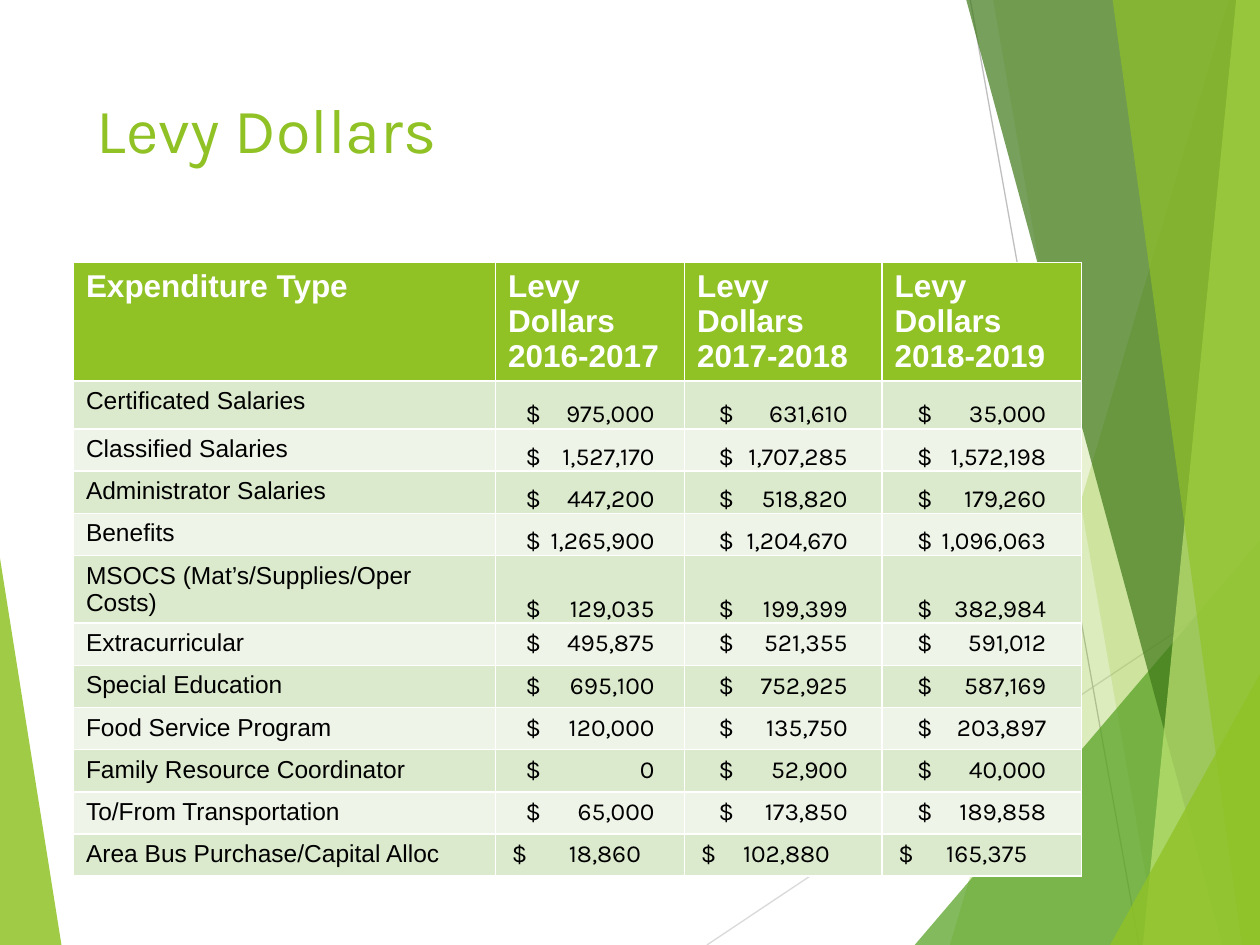
from dataclasses import dataclass

from lxml.etree import SubElement
from pptx import Presentation
from pptx.dml.color import RGBColor
from pptx.enum.shapes import MSO_CONNECTOR
from pptx.enum.text import MSO_ANCHOR, PP_ALIGN
from pptx.oxml.ns import qn
from pptx.util import Cm, Pt


@dataclass(frozen=True)
class Theme:
    lime: str = "90C226"
    green: str = "54A021"
    forest: str = "3F7819"
    pale: str = "C0E474"
    white: str = "FFFFFF"
    black: str = "000000"
    bands: tuple = ("DBE9CD", "EEF4E8")
    lines: tuple = ("D9D9D9", "BFBFBF")
    body_font: str = "Arial"
    accent_font: str = "Karla"
    title_size: int = 36
    header_size: int = 18
    body_size: int = 14


@dataclass(frozen=True)
class Box:
    """An area of the page, in centimetres."""
    left: float
    top: float
    width: float
    height: float


THEME = Theme()
PAGE = Box(0, 0, 25.4, 19.05)
TITLE = Box(1.7, 1.7, 17.63, 3.66)
TABLE = Box(1.48, 5.29, 20.32, 11.99)

COLUMN_WIDTHS = (8.51, 3.81, 3.98, 4.02)
HEADER_HEIGHT, FIRST_HEIGHT, ROW_HEIGHT = 1.52, 0.97, 0.85
AMOUNT_WIDTH = 2.6  # from the dollar sign to the last digit
LOW_ROWS = 5  # the first rows hold their amounts at the bottom
YEARS = ("2016-2017", "2017-2018", "2018-2019")
EXPENDITURES = (
    ("Certificated Salaries", "975,000", "631,610", "35,000"),
    ("Classified Salaries", "1,527,170", "1,707,285", "1,572,198"),
    ("Administrator Salaries", "447,200", "518,820", "179,260"),
    ("Benefits", "1,265,900", "1,204,670", "1,096,063"),
    ("MSOCS (Mat’s/Supplies/Oper Costs)", "129,035", "199,399", "382,984"),
    ("Extracurricular", "495,875", "521,355", "591,012"),
    ("Special Education", "695,100", "752,925", "587,169"),
    ("Food Service Program", "120,000", "135,750", "203,897"),
    ("Family Resource Coordinator", "0", "52,900", "40,000"),
    ("To/From Transportation", "65,000", "173,850", "189,858"),
    ("Area Bus Purchase/Capital Alloc", "18,860", "102,880", "165,375"),
)


def set_font(para, color, **formats):
    for name, value in formats.items():
        setattr(para.font, name, value)
    para.font.color.rgb = RGBColor.from_string(color)


def add_facet(page, box, points, color, opacity):
    """Draw a borderless translucent polygon; points are relative to the box."""
    corners = [(Cm(box.left + x), Cm(box.top + y)) for x, y in points]
    builder = page.shapes.build_freeform(*corners[0])
    builder.add_line_segments(corners[1:], close=True)
    facet = builder.convert_to_shape()
    facet.shadow.inherit = False
    facet.line.fill.background()
    facet.fill.solid()
    facet.fill.fore_color.rgb = RGBColor.from_string(color)
    color_node = facet.fill._xPr.find(".//" + qn("a:srgbClr"))
    SubElement(color_node, qn("a:alpha"), val=str(opacity * 1000))


def add_thin_line(page, box, start, end, color):
    line = page.shapes.add_connector(
        MSO_CONNECTOR.STRAIGHT,
        Cm(box.left + start[0]), Cm(box.top + start[1]),
        Cm(box.left + end[0]), Cm(box.top + end[1]))
    line.line.width = Pt(0.75)
    line.line.color.rgb = RGBColor.from_string(color)
    SubElement(line._element.spPr, qn("a:effectLst"))


def add_backdrop(page, box):
    right, bottom = box.width, box.height

    def band(top_x, bottom_x):
        return [(top_x, 0), (bottom_x, bottom), (right, bottom), (right, 0)]

    def wedge(edge_x, edge_y, foot_x):
        return [(edge_x, edge_y), (foot_x, bottom), (edge_x, bottom)]

    add_facet(page, box, wedge(0, 11.25, 1.24), THEME.lime, 85)
    add_thin_line(page, box, (14.25, bottom), (right, 11.6), THEME.lines[0])
    add_thin_line(page, box, (19.56, 0), (22.96, bottom), THEME.lines[1])
    for points, color, opacity in (
        (band(24.77, 19.15), THEME.lime, 30),
        (band(20.02, 23.34), THEME.lime, 20),
        (wedge(right, 10.9, 18.44), THEME.green, 72),
        (band(19.48, 24.64), THEME.forest, 70),
        (band(24.92, 23.04), THEME.pale, 70),
        (band(22.43, 25.04), THEME.lime, 65),
        (wedge(right, 13.59, 22.38), THEME.lime, 80),
    ):
        add_facet(page, box, points, color, opacity)


def add_title(page, box, text):
    title = page.shapes.title
    for name in ("left", "top", "width", "height"):
        setattr(title, name, Cm(getattr(box, name)))
    title.text_frame.text = text
    title.text_frame.vertical_anchor = MSO_ANCHOR.TOP
    para = title.text_frame.paragraphs[0]
    para.alignment = PP_ALIGN.LEFT
    set_font(para, THEME.lime, name=THEME.accent_font, size=Pt(THEME.title_size))


def fill_cell(cell, text, fill, color, **formats):
    cell.text = text
    cell.fill.solid()
    cell.fill.fore_color.rgb = RGBColor.from_string(fill)
    for para in cell.text_frame.paragraphs:
        set_font(para, color, **formats)


def align_amount(cell, indent, low):
    """Set the dollar sign at the indent and the digits on a right tab stop."""
    cell.margin_left, cell.margin_right = Cm(indent), Cm(0.03)
    if low:
        cell.margin_top, cell.margin_bottom = Cm(0.03), 0
        cell.vertical_anchor = MSO_ANCHOR.BOTTOM
    para = cell.text_frame.paragraphs[0]
    para.alignment = PP_ALIGN.LEFT
    tabs = SubElement(para._p.get_or_add_pPr(), qn("a:tabLst"))
    SubElement(tabs, qn("a:tab"), pos=str(Cm(AMOUNT_WIDTH)), algn="r")


def add_levy_table(page, box):
    table = page.shapes.add_table(
        len(EXPENDITURES) + 1, len(COLUMN_WIDTHS), Cm(box.left), Cm(box.top),
        Cm(box.width), Cm(box.height)).table
    for column, width in zip(table.columns, COLUMN_WIDTHS):
        column.width = Cm(width)
    heights = [HEADER_HEIGHT, FIRST_HEIGHT] + [ROW_HEIGHT] * (len(EXPENDITURES) - 1)
    for row, height in zip(table.rows, heights):
        row.height = Cm(height)

    headings = ["Expenditure Type"] + [f"Levy Dollars\n{year}" for year in YEARS]
    for cell, heading in zip(table.rows[0].cells, headings):
        fill_cell(cell, heading, THEME.lime, THEME.white, name=THEME.body_font,
                  size=Pt(THEME.header_size), bold=True)

    for index, (label, *amounts) in enumerate(EXPENDITURES):
        fill = THEME.bands[index % 2]
        is_last = index == len(EXPENDITURES) - 1
        label_cell, *amount_cells = table.rows[index + 1].cells
        fill_cell(label_cell, label, fill, THEME.black, name=THEME.body_font,
                  size=Pt(THEME.body_size), bold=False)
        for cell, amount, width in zip(amount_cells, amounts, COLUMN_WIDTHS[1:]):
            fill_cell(cell, f"$\t{amount}", fill, THEME.black, name=THEME.accent_font,
                      size=Pt(THEME.body_size), bold=False)
            indent = 0.33 if is_last else (width - AMOUNT_WIDTH) / 2
            align_amount(cell, indent, index < LOW_ROWS)


def main():
    deck = Presentation()
    deck.slide_width, deck.slide_height = Cm(PAGE.width), Cm(PAGE.height)
    page = deck.slides.add_slide(deck.slide_layouts.get_by_name("Title Only"))
    add_backdrop(page, PAGE)
    add_title(page, TITLE, "Levy Dollars")
    add_levy_table(page, TABLE)
    deck.save("out.pptx")


if __name__ == "__main__":
    main()
